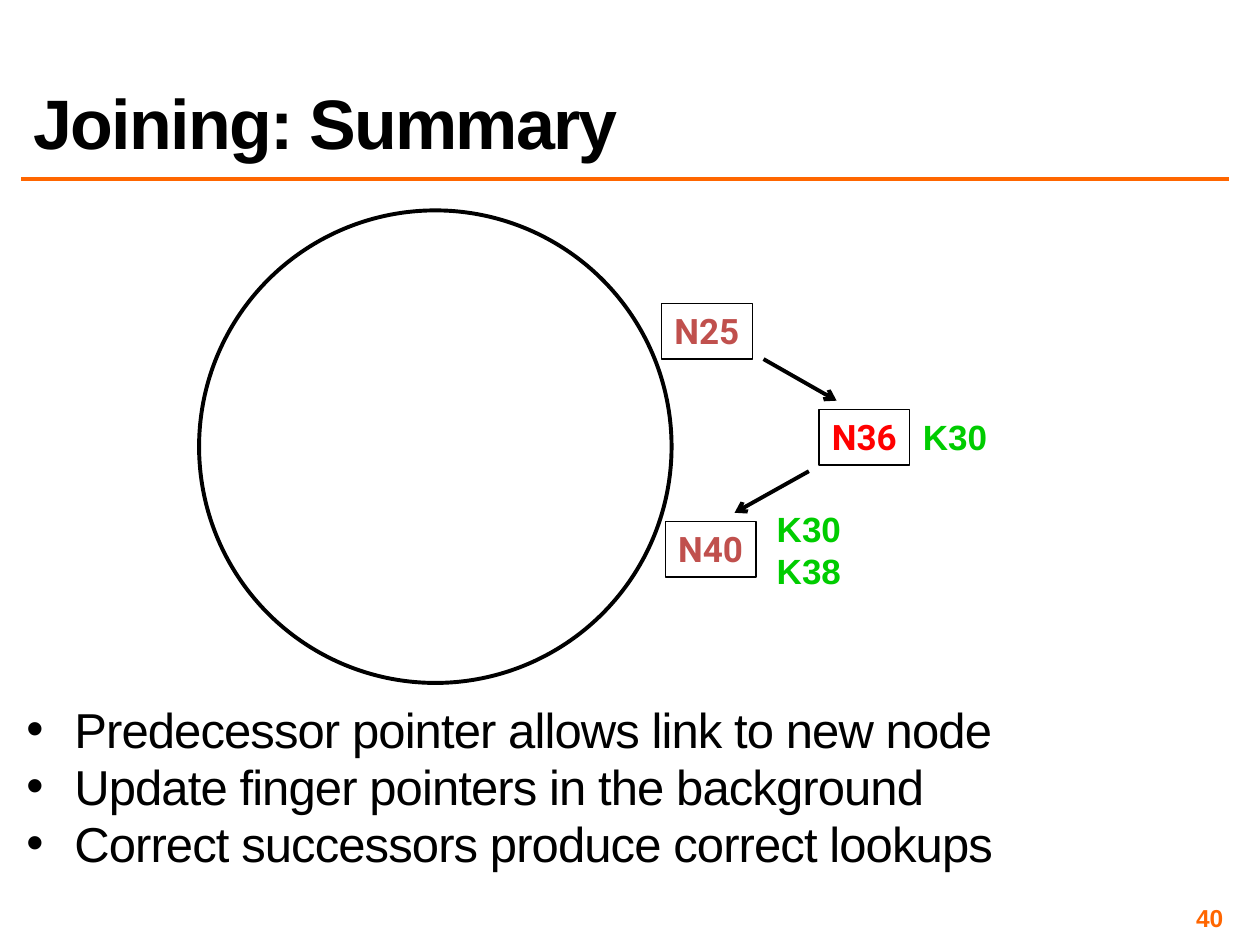
import pptx
import pptx.util
import pptx.dml.color
import pptx.enum.shapes
import pptx.enum.text
import pptx.oxml.ns
from lxml import etree
from pptx.util import Inches

COLORS = {
    "black": "000000",
    "orange": "FF6600",
    "red": "FF0000",
    "brick": "C0504D",
    "green": "00CC00",
}
ALIGN = pptx.enum.text.PP_ALIGN
ANCHOR = pptx.enum.text.MSO_ANCHOR
SHAPES = pptx.enum.shapes.MSO_SHAPE
NODE_WIDTH, NODE_HEIGHT = 0.72, 0.44


def rgb(name):
    return pptx.dml.color.RGBColor.from_string(COLORS[name])


def add_xml(parent, tag, **attributes):
    return etree.SubElement(parent, pptx.oxml.ns.qn(tag), attributes)


def write(box, lines, size, color, bold=True, font="Arial", align=ALIGN.LEFT,
          anchor=ANCHOR.TOP, margin=None, wrap=True, tracking=0):
    """Fill a shape with one paragraph per line, all in the same style."""
    frame = box.text_frame
    frame.text = "\n".join(lines)
    frame.word_wrap = wrap
    frame.vertical_anchor = anchor
    if margin is not None:
        frame.margin_left = frame.margin_right = Inches(margin)
        frame.margin_top = frame.margin_bottom = Inches(margin)
    for para in frame.paragraphs:
        para.alignment = align
        for span in para.runs:
            span.font.size = pptx.util.Pt(size)
            span.font.name = font
            span.font.bold = bold
            span.font.color.rgb = rgb(color)
            if tracking:
                span.font._element.set("spc", str(int(tracking * 100)))
    return frame


def add_text(page, left, top, width, height, lines, size, color, **style):
    box = page.shapes.add_textbox(
        Inches(left), Inches(top), Inches(width), Inches(height))
    return write(box, lines, size, color, **style)


def add_bullets(page, left, top, width, height, lines):
    frame = add_text(page, left, top, width, height, lines, 28, "black",
                     bold=False, margin=0.04, tracking=-0.5)
    for para in frame.paragraphs:
        para.line_spacing = 0.8
        properties = para._p.get_or_add_pPr()
        properties.set("marL", str(Inches(0.38)))
        properties.set("indent", str(Inches(-0.38)))
        before = add_xml(properties, "a:spcBef")
        add_xml(before, "a:spcPct", val="20000")
        add_xml(properties, "a:buFont", typeface="Arial")
        add_xml(properties, "a:buChar", char="•")


def add_outline(page, kind, left, top, width, height, weight):
    shape = page.shapes.add_shape(
        kind, Inches(left), Inches(top), Inches(width), Inches(height))
    shape.shadow.inherit = False
    shape.fill.background()
    shape.line.color.rgb = rgb("black")
    shape.line.width = pptx.util.Pt(weight)
    return shape


def add_node(page, left, top, name, color):
    box = add_outline(page, SHAPES.RECTANGLE, left, top,
                      NODE_WIDTH, NODE_HEIGHT, 0.75)
    write(box, [name], 20, color, font="Roboto", align=ALIGN.CENTER, wrap=False)


def add_keys(page, left, top, height, keys):
    add_text(page, left, top, NODE_WIDTH, height, keys, 20, "green",
             align=ALIGN.CENTER, wrap=False)


def add_line(page, start, end, color, weight, arrow=False):
    line = page.shapes.add_connector(
        pptx.enum.shapes.MSO_CONNECTOR.STRAIGHT,
        *(Inches(value) for value in start + end))
    line.line.color.rgb = rgb(color)
    line.line.width = pptx.util.Pt(weight)
    if arrow:
        add_xml(line.line._get_or_add_ln(), "a:tailEnd", type="arrow")
    add_xml(line._element.spPr, "a:effectLst")


def main():
    deck = pptx.Presentation()
    deck.slide_width, deck.slide_height = Inches(10), Inches(7.5)
    page = deck.slides.add_slide(deck.slide_layouts[6])

    # Rule, bullets, page number and title
    add_line(page, (0.17, 1.42), (9.75, 1.42), "orange", 2)
    add_bullets(page, 0.17, 5.6, 9.58, 1.48, [
        "Predecessor pointer allows link to new node",
        "Update finger pointers in the background",
        "Correct successors produce correct lookups",
    ])
    add_text(page, 7.42, 7.17, 2.33, 0.23, ["40"], 14, "orange",
             align=ALIGN.RIGHT, anchor=ANCHOR.MIDDLE, margin=0.04)
    title = add_text(page, 0.17, 0.17, 9.58, 1.17, ["Joining: Summary"], 40,
                     "black", anchor=ANCHOR.BOTTOM, tracking=-1)
    title.paragraphs[0].line_spacing = 0.8

    # Ring with its nodes
    add_outline(page, SHAPES.OVAL, 1.58, 1.67, 3.75, 3.75, 2.25)
    add_node(page, 6.5, 3.25, "N36", "red")
    add_node(page, 5.28, 4.14, "N40", "brick")
    add_node(page, 5.25, 2.41, "N25", "brick")

    # Successor pointers
    add_line(page, (6.06, 2.85), (6.64, 3.18), "black", 2.25, arrow=True)
    add_line(page, (6.42, 3.74), (5.83, 4.07), "black", 2.25, arrow=True)

    # Keys held by the nodes
    add_keys(page, 6.06, 3.98, 0.77, ["K30", "K38"])
    add_keys(page, 7.22, 3.25, NODE_HEIGHT, ["K30"])

    deck.save("out.pptx")


if __name__ == "__main__":
    main()
